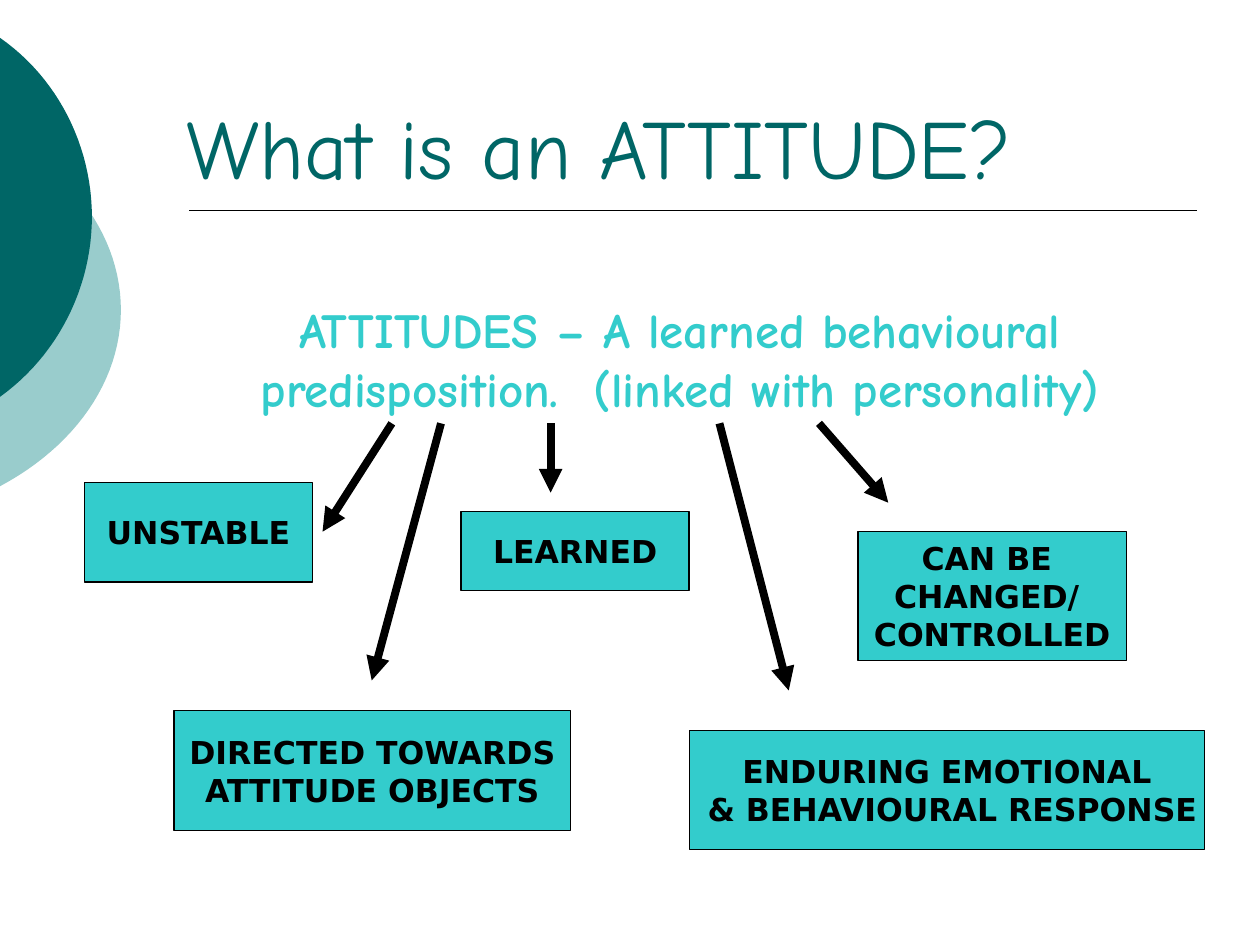
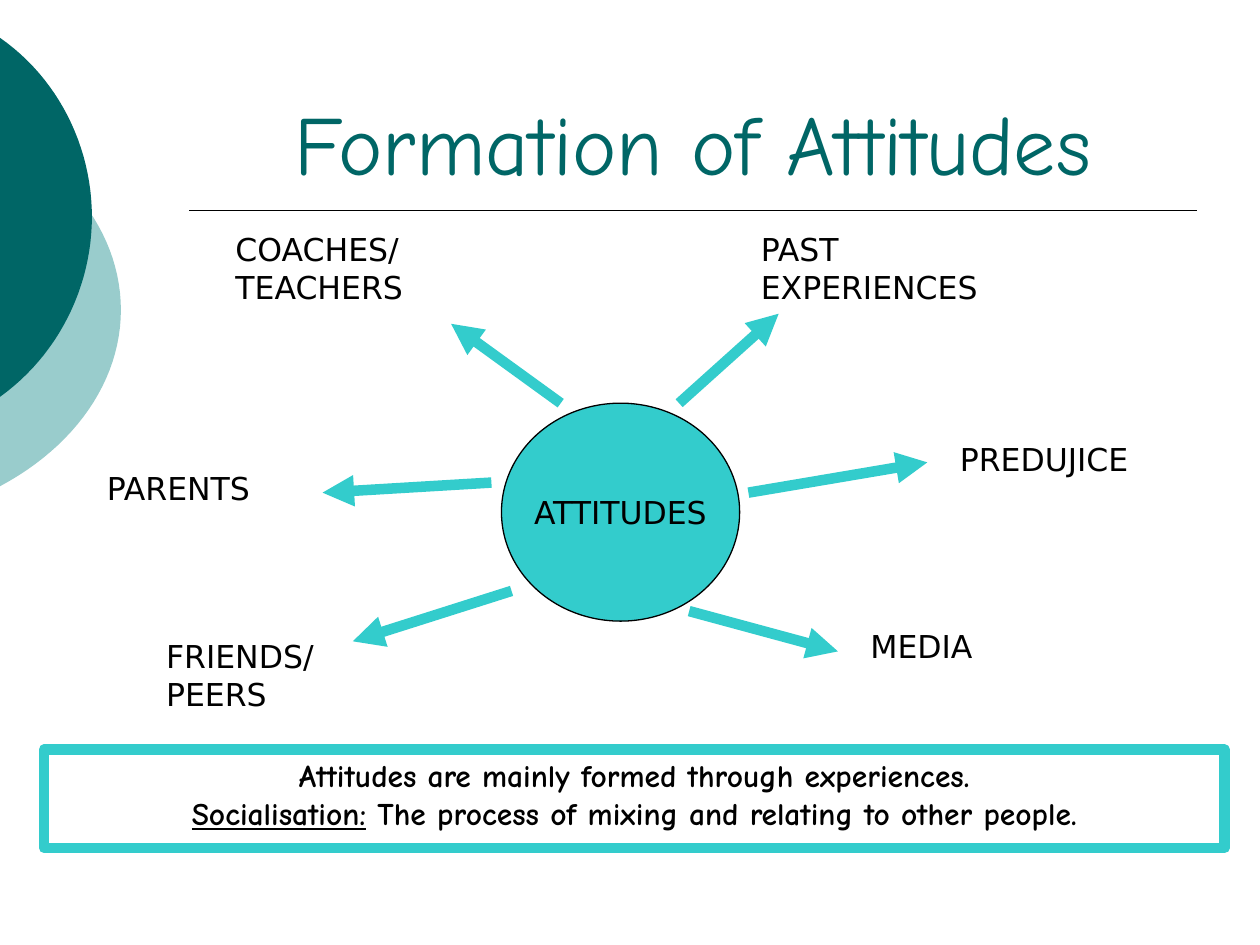
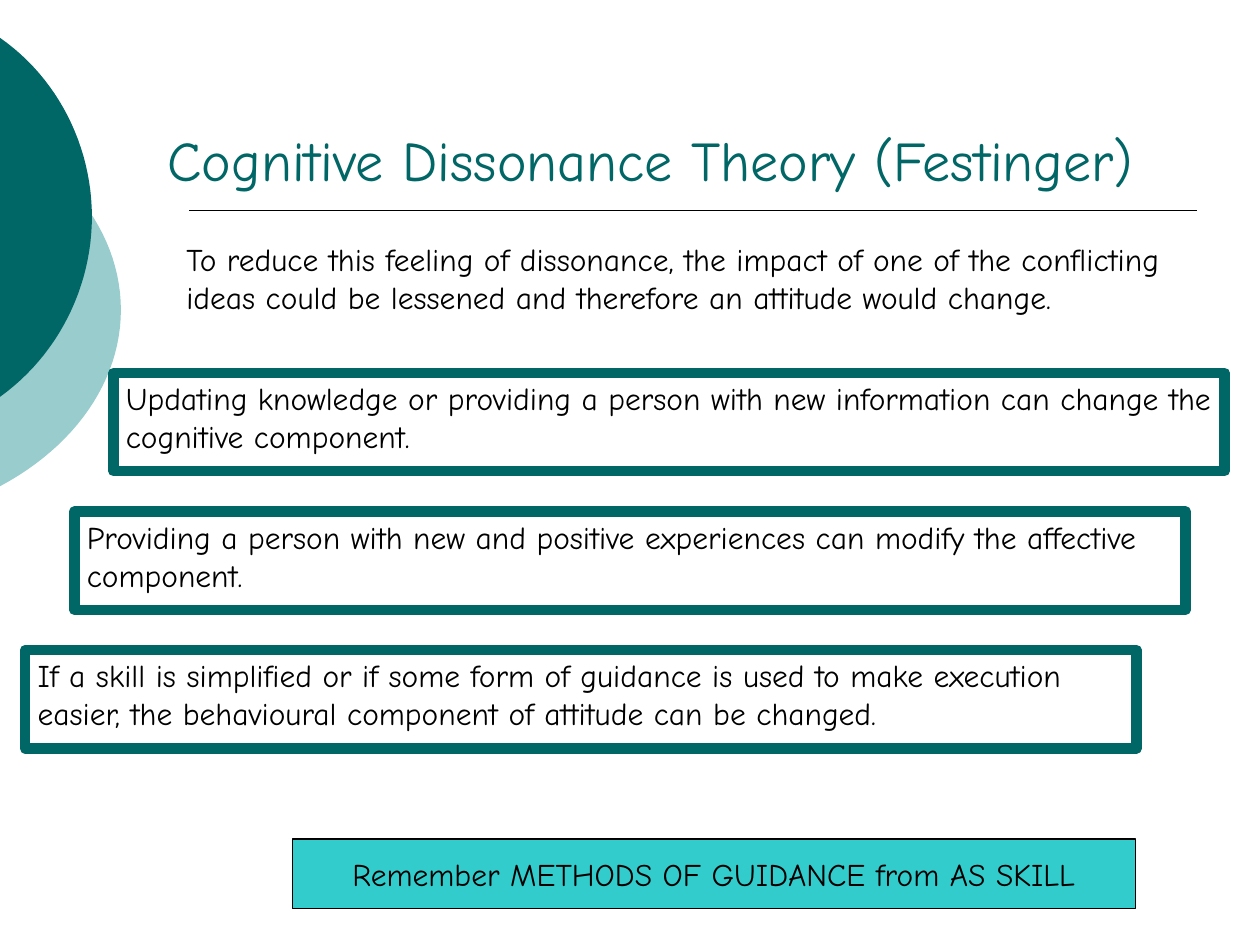
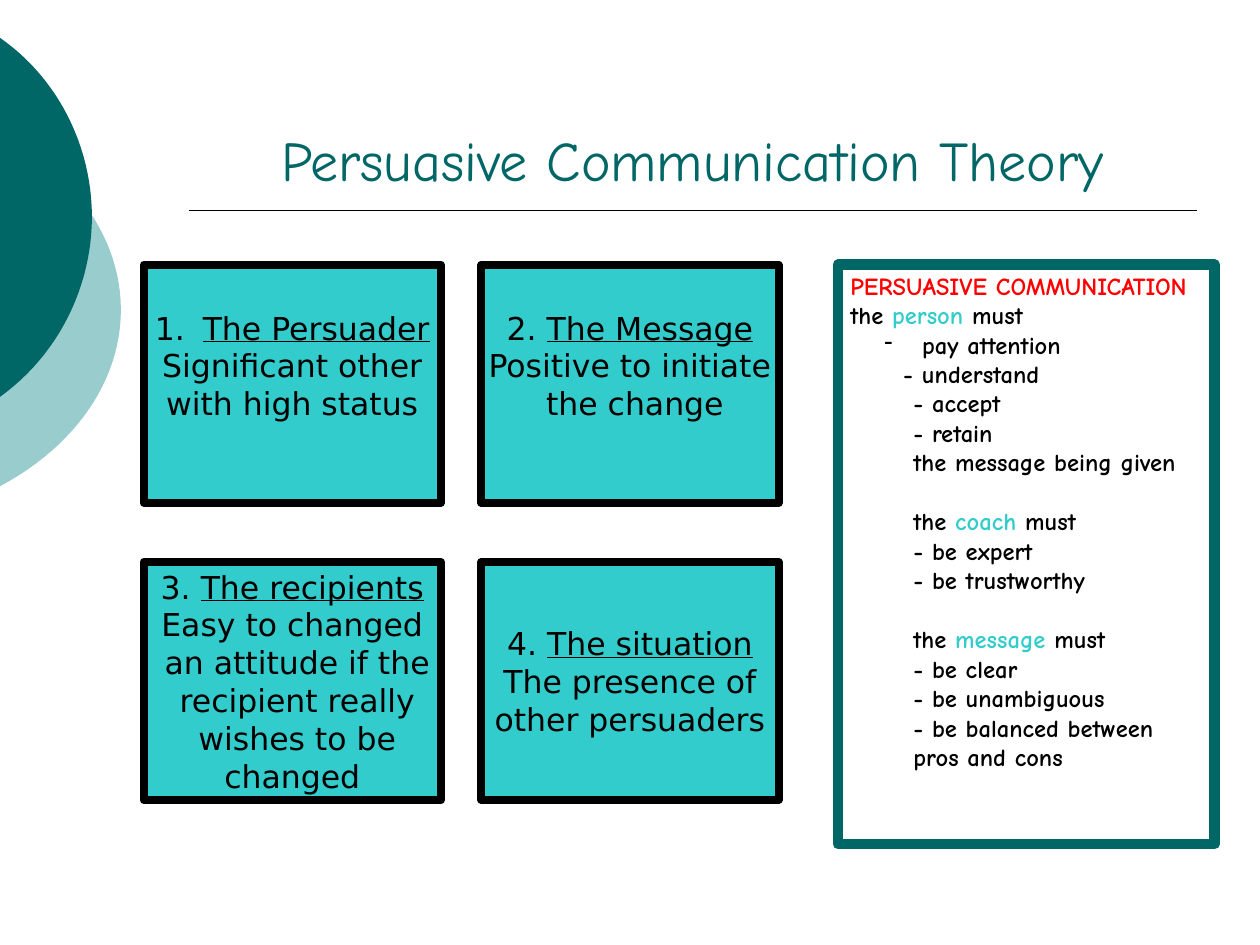
"""Build four slides on attitudes in sport and how they are formed and changed."""
from dataclasses import dataclass

from lxml import etree
from pptx import Presentation
from pptx.dml.color import RGBColor
from pptx.enum.shapes import MSO_CONNECTOR, MSO_SHAPE
from pptx.enum.text import MSO_ANCHOR, MSO_AUTO_SIZE, PP_ALIGN
from pptx.oxml.ns import qn
from pptx.util import Emu, Pt

PX = 9144
RECT, OVAL = MSO_SHAPE.RECTANGLE, MSO_SHAPE.OVAL
STRAIGHT = MSO_CONNECTOR.STRAIGHT
TOP, MIDDLE, BOTTOM = MSO_ANCHOR.TOP, MSO_ANCHOR.MIDDLE, MSO_ANCHOR.BOTTOM
LEFT, CENTER = PP_ALIGN.LEFT, PP_ALIGN.CENTER
NO_AUTOFIT = MSO_AUTO_SIZE.NONE
TITLE_ONLY = 5

COLORS = {"black": "000000", "teal": "006666", "aqua": "33CCCC",
          "pale": "99CCCC", "red": "FF0000"}
HAND, PLAIN = "Comic Neue", "DejaVu Sans"


@dataclass
class Line:
    """One paragraph: its runs, indents, list mark and space before."""
    runs: list
    left: int = 0
    hang: int = 0
    mark: tuple = ()
    before: int = 0


def px(*lengths):
    return [Emu(round(length * PX)) for length in lengths]


def rgb(name):
    return RGBColor.from_string(COLORS[name])


def bezier(start, first, second, end, steps=24):
    for step in range(1, steps + 1):
        t = step / steps
        u = 1 - t
        yield tuple(u**3 * a + 3 * u * u * t * b + 3 * u * t * t * c + t**3 * d
                    for a, b, c, d in zip(start, first, second, end))


def write(frame, lines, font=PLAIN, size=18, color="black", bold=False,
          align=LEFT, anchor=TOP, wrap=True):
    """Fill a text frame; a line is a string or a Line, a run a string or (text, format)."""
    frame.word_wrap, frame.auto_size, frame.vertical_anchor = wrap, NO_AUTOFIT, anchor
    for index, line in enumerate(lines):
        line = line if isinstance(line, Line) else Line([line])
        paragraph = frame.paragraphs[0] if index == 0 else frame.add_paragraph()
        paragraph.alignment = align
        paragraph.space_before = Pt(line.before)
        for part in line.runs:
            text, changes = (part, {}) if isinstance(part, str) else part
            run = paragraph.add_run()
            run.text = text
            run.font.name, run.font.size, run.font.bold = font, Pt(size), bold
            run.font.underline = changes.get("underline", False)
            run.font.color.rgb = rgb(changes.get("color", color))
        if line.left:
            properties = paragraph._p.get_or_add_pPr()
            properties.set("marL", str(line.left * PX))
            properties.set("indent", str(-line.hang * PX))
            if line.mark:
                tag, key, value = line.mark
                etree.SubElement(properties, qn(tag)).set(key, value)


class Deck:
    """Holds the presentation, its shared style and the current slide."""

    def __init__(self):
        self.prs = Presentation()
        self.prs.slide_width, self.prs.slide_height = px(1000, 750)
        self.layout = self.prs.slide_layouts[TITLE_ONLY]
        for placeholder in list(self.layout.placeholders)[1:]:
            placeholder.element.getparent().remove(placeholder.element)
        self.slide = None

    def add_slide(self, title, at, size, align=CENTER):
        first = self.slide is None
        self.slide = self.prs.slides.add_slide(self.layout)
        if first:
            self.decorate_layout()
        heading = self.slide.shapes.title
        heading.left, heading.top, heading.width, heading.height = px(*at)
        write(heading.text_frame, [title], font=HAND, size=size, color="teal",
              align=align, anchor=BOTTOM)

    def decorate_layout(self):
        decor = [self.arc("pale", (106, 246, 386), 96, (138, 190), 60),
                 self.arc("teal", (30, 172, 315), 73, (62, 116), 46),
                 self.line((150, 167), (950, 167), "black", 1)]
        for part in decor:
            self.layout.shapes.element.append(part.element)

    def arc(self, color, heights, reach, bends, shoulder):
        top, middle, bottom = heights
        start, tip, end = (0, top), (reach, middle), (0, bottom)
        upper = bezier(start, (shoulder, bends[0]), (reach, bends[1]), tip)
        lower = bezier(tip, (reach, 2 * middle - bends[1]),
                       (shoulder, 2 * middle - bends[0]), end)
        builder = self.slide.shapes.build_freeform(*px(*start))
        builder.add_line_segments([px(*point) for point in [*upper, *lower]], close=True)
        shape = builder.convert_to_shape()
        shape.shadow.inherit = False
        shape.fill.solid()
        shape.fill.fore_color.rgb = rgb(color)
        shape.line.fill.background()
        return shape

    def line(self, start, end, color, width, arrow=False):
        connector = self.slide.shapes.add_connector(STRAIGHT, *px(*start, *end))
        connector.line.color.rgb = rgb(color)
        connector.line.width = Pt(width)
        properties = connector.element.spPr
        if arrow:
            outline = properties.find(qn("a:ln"))
            etree.SubElement(outline, qn("a:tailEnd")).set("type", "triangle")
        etree.SubElement(properties, qn("a:effectLst"))
        return connector

    def text(self, at, lines, **style):
        box = self.slide.shapes.add_textbox(*px(*at))
        write(box.text_frame, lines, **style)

    def shape(self, at, lines, kind=RECT, fill=None, line="black", width=0.75, **style):
        shape = self.slide.shapes.add_shape(kind, *px(*at))
        shape.shadow.inherit = False
        if fill:
            shape.fill.solid()
            shape.fill.fore_color.rgb = rgb(fill)
        else:
            shape.fill.background()
        shape.line.color.rgb = rgb(line)
        shape.line.width = Pt(width)
        write(shape.text_frame, lines, **style)
        return shape

    def label(self, at, lines, **style):
        return self.shape(at, lines, fill="aqua", align=CENTER, anchor=MIDDLE,
                          wrap=False, **style)

    def framed(self, at, lines, line="teal", **style):
        return self.shape(at, lines, line=line, width=6, font=HAND, **style)


def definition_slide(deck):
    deck.add_slide("What is an ATTITUDE?", (138, 36, 827, 125), 48, LEFT)
    deck.text((122, 233, 835, 103),
              ["ATTITUDES – A learned behavioural predisposition.  (linked with personality)"],
              font=HAND, size=28, color="aqua", bold=True, align=CENTER)
    traits = [
        ((67, 383, 181, 79), ["UNSTABLE"]),
        ((681, 422, 213, 102), ["CAN BE ", "CHANGED/ ", "CONTROLLED"]),
        ((547, 580, 409, 94), ["ENDURING EMOTIONAL", " & BEHAVIOURAL RESPONSE"]),
        ((366, 406, 181, 63), ["LEARNED"]),
        ((138, 564, 315, 95), ["DIRECTED TOWARDS", "ATTITUDE OBJECTS"]),
    ]
    for at, lines in traits:
        deck.label(at, lines, bold=True)
    for start, end in [(311, (256, 422)), (571, (626, 548)), (650, (705, 399)),
                       (350, (295, 540)), (437, (437, 391))]:
        deck.line((start, 336), end, "black", 4.5, arrow=True)


def formation_slide(deck):
    deck.add_slide("Formation of Attitudes", (150, 33, 800, 125), 48)
    deck.label((398, 320, 189, 173), ["ATTITUDES"], kind=OVAL)
    influences = [
        ("PARENTS", (75, 367, 165, 40), (390, 383), (256, 391)),
        ("FRIENDS/ PEERS", (122, 501, 173, 70), (406, 469), (280, 509)),
        ("COACHES/ TEACHERS", (177, 178, 181, 70), (445, 320), (358, 257)),
        ("MEDIA", (681, 493, 181, 40), (547, 485), (665, 517)),
        ("PAST EXPERIENCES", (594, 178, 213, 70), (539, 320), (618, 249)),
        ("PREDUJICE", (752, 344, 213, 40), (594, 391), (736, 367)),
    ]
    for influence, at, start, end in influences:
        deck.text(at, [influence])
        deck.line(start, end, "aqua", 6, arrow=True)
    deck.framed((35, 595, 937, 78),
                ["Attitudes are mainly formed through experiences.",
                 Line([("Socialisation:", {"underline": True}),
                       " The process of mixing and relating to other people."])],
                line="aqua", bold=True, align=CENTER)


def dissonance_slide(deck):
    deck.add_slide("Cognitive Dissonance Theory (Festinger)", (83, 76, 867, 82), 32)
    deck.text((138, 186, 811, 100),
              ["To reduce this feeling of dissonance, the impact of one of the conflicting "
               "ideas could be lessened and therefore an attitude would change."], font=HAND)
    changes = [
        (90, "Updating knowledge or providing a person with new information can change "
             "the cognitive component."),
        (59, "Providing a person with new and positive experiences can modify the "
             "affective component."),
        (20, "If a skill is simplified or if some form of guidance is used to make "
             "execution easier, the behavioural component of attitude can be changed."),
    ]
    for row, (left, change) in enumerate(changes):
        deck.framed((left, 296 + 110 * row, 882, 78), [change])
    deck.label((232, 666, 669, 55), ["Remember METHODS OF GUIDANCE from AS SKILL"], font=HAND)


def persuasion_slide(deck):
    deck.add_slide("Persuasive Communication Theory", (150, 33, 800, 125), 32)

    def demand(who):
        return Line(["the ", (who, {"color": "aqua"}), " must"], left=50, before=17)

    def step(text):
        return Line([text], left=50)

    deck.framed((665, 210, 299, 460), [
        Line([("PERSUASIVE COMMUNICATION", {"color": "red"})]),
        Line(["the ", ("person ", {"color": "aqua"}), "must"]),
        Line(["pay attention"], left=57, hang=30, mark=("a:buChar", "char", "-")),
        Line(["- understand"], left=42),
        *map(step, ["- accept", "- retain", "the message being given"]),
        demand("coach"),
        *map(step, ["- be expert", "- be trustworthy"]),
        demand("message"),
        *map(step, ["- be clear", "- be unambiguous", "- be balanced between pros and cons"]),
    ], size=14, bold=True)

    factors = [
        ("The Persuader", ["Significant other", "with high status"]),
        ("The Message", ["Positive to initiate", " the change"]),
        ("The recipients", ["Easy to changed", " an attitude if the", " recipient really",
                            " wishes to be", "changed"]),
        ("The situation", ["The presence of", "other persuaders"]),
    ]
    for index, (factor, details) in enumerate(factors):
        row, column = divmod(index, 2)
        name = (factor, {"underline": True})
        if index == 0:
            heading = Line([name], left=38, hang=38,
                           mark=("a:buAutoNum", "type", "arabicPeriod"))
        else:
            heading = Line([f"{index + 1}. ", name])
        card = deck.label((114 + 268 * column, 210 + 236 * row, 236, 189),
                          [heading, *details], width=4.5)
        if row == 0:
            card.text_frame.margin_bottom = px(34)[0]


def main():
    deck = Deck()
    definition_slide(deck)
    formation_slide(deck)
    dissonance_slide(deck)
    persuasion_slide(deck)
    deck.prs.save("out.pptx")


if __name__ == "__main__":
    main()
